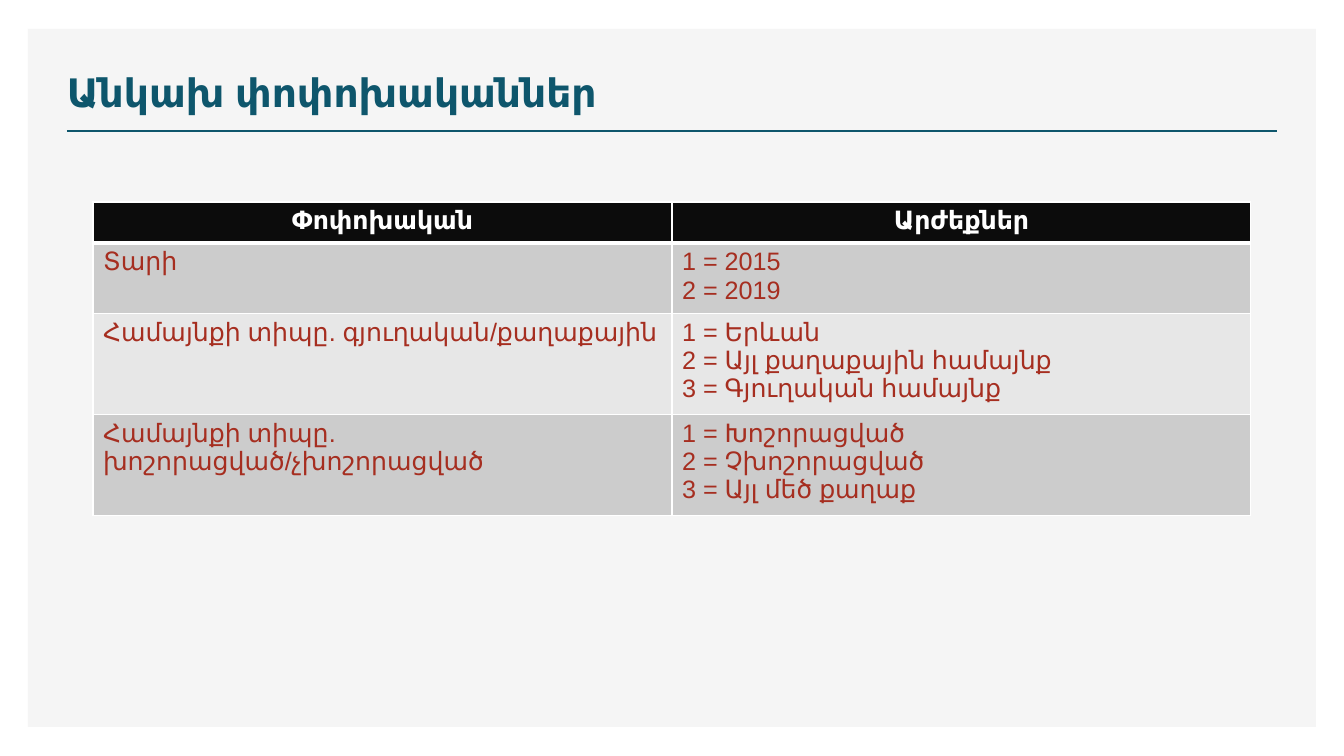
from dataclasses import dataclass
from lxml.etree import SubElement
from pptx import Presentation
from pptx.dml.color import RGBColor
from pptx.enum.shapes import MSO_CONNECTOR as CONN, MSO_SHAPE as SHAPE
from pptx.enum.text import MSO_ANCHOR as ANCHOR, PP_ALIGN as ALIGN
from pptx.oxml.ns import qn
from pptx.util import Emu, Pt

TITLE = "Անկախ փոփոխականներ"
HEADER = ("Փոփոխական", "Արժեքներ")
VARIABLES = [
    ("Տարի", ["1 = 2015", "2 = 2019"]),
    ("Համայնքի տիպը. գյուղական/քաղաքային",
     ["1 = Երևան", "2 = Այլ քաղաքային համայնք", "3 = Գյուղական համայնք"]),
    ("Համայնքի տիպը. խոշորացված/չխոշորացված",
     ["1 = Խոշորացված", "2 = Չխոշորացված", "3 = Այլ մեծ քաղաք"]),
]
SLIDE = (1344, 756)
PANEL = (28, 29, 1288, 698)
TITLE_BOX = (57, 49, 758, 71)
RULE = (67, 131, 1277, 131)
TABLE_LEFT, TABLE_TOP, COL_W, ROW_H = 93, 202, 579, 41


@dataclass(frozen=True)
class Theme:
    font: str = "Arial"
    accent: str = "0E566C"
    panel: str = "F5F5F5"
    header: str = "0C0C0C"
    white: str = "FFFFFF"
    text: str = "A62E20"
    bands: tuple = ("CCCCCC", "E7E7E7")
    title_size: int = 28
    table_size: int = 18
    rule_width: int = 2
    border: int = 1
    header_border: int = 3


T = Theme()


def px(n):
    return Emu(round(n * 914400 / 100.8))


def box(values):
    return [px(v) for v in values]


def rgb(color):
    return RGBColor.from_string(color)


def write(tf, lines, size, color, bold=False, align=ALIGN.LEFT):
    for i, line in enumerate(lines):
        p = tf.paragraphs[0] if i == 0 else tf.add_paragraph()
        p.text = line
        p.alignment = align
        f = p.font
        f.name, f.size, f.bold = T.font, Pt(size), bold
        f.color.rgb = rgb(color)


def set_borders(cell, bottom):
    tcPr = cell._tc.get_or_add_tcPr()
    widths = {"L": T.border, "R": T.border, "T": T.border, "B": bottom}
    for side, width in widths.items():
        ln = SubElement(tcPr, qn(f"a:ln{side}"), w=str(Pt(width)))
        fill = SubElement(ln, qn("a:solidFill"))
        SubElement(fill, qn("a:srgbClr"), val=T.white)


def fill_cell(cell, lines, fill, color, bottom=T.border, **style):
    set_borders(cell, bottom)
    cell.fill.solid()
    cell.fill.fore_color.rgb = rgb(fill)
    write(cell.text_frame, lines, T.table_size, color, **style)


def add_frame(s):
    panel = s.shapes.add_shape(SHAPE.RECTANGLE, *box(PANEL))
    panel.shadow.inherit = False
    panel.fill.solid()
    panel.fill.fore_color.rgb = rgb(T.panel)
    panel.line.fill.background()

    rule = s.shapes.add_connector(CONN.STRAIGHT, *box(RULE))
    rule.line.color.rgb = rgb(T.accent)
    rule.line.width = Pt(T.rule_width)
    SubElement(rule._element.spPr, qn("a:effectLst"))

    tf = s.shapes.add_textbox(*box(TITLE_BOX)).text_frame
    tf.word_wrap = True
    tf.vertical_anchor = ANCHOR.BOTTOM
    write(tf, [TITLE], T.title_size, T.accent, bold=True)


def add_variables(s):
    rows, cols = len(VARIABLES) + 1, len(HEADER)
    area = (TABLE_LEFT, TABLE_TOP, cols * COL_W, rows * ROW_H)
    table = s.shapes.add_table(rows, cols, *box(area)).table
    for col in table.columns:
        col.width = px(COL_W)
    for row in table.rows:
        row.height = px(ROW_H)
    for c, label in enumerate(HEADER):
        fill_cell(table.cell(0, c), [label], T.header, T.white,
                  T.header_border, bold=True, align=ALIGN.CENTER)
    for r, (name, values) in enumerate(VARIABLES):
        band = T.bands[r % len(T.bands)]
        for c, lines in enumerate(([name], values)):
            fill_cell(table.cell(r + 1, c), lines, band, T.text)


def main():
    prs = Presentation()
    prs.slide_width, prs.slide_height = box(SLIDE)
    s = prs.slides.add_slide(prs.slide_layouts[6])
    add_frame(s)
    add_variables(s)
    prs.save("out.pptx")


if __name__ == "__main__":
    main()
